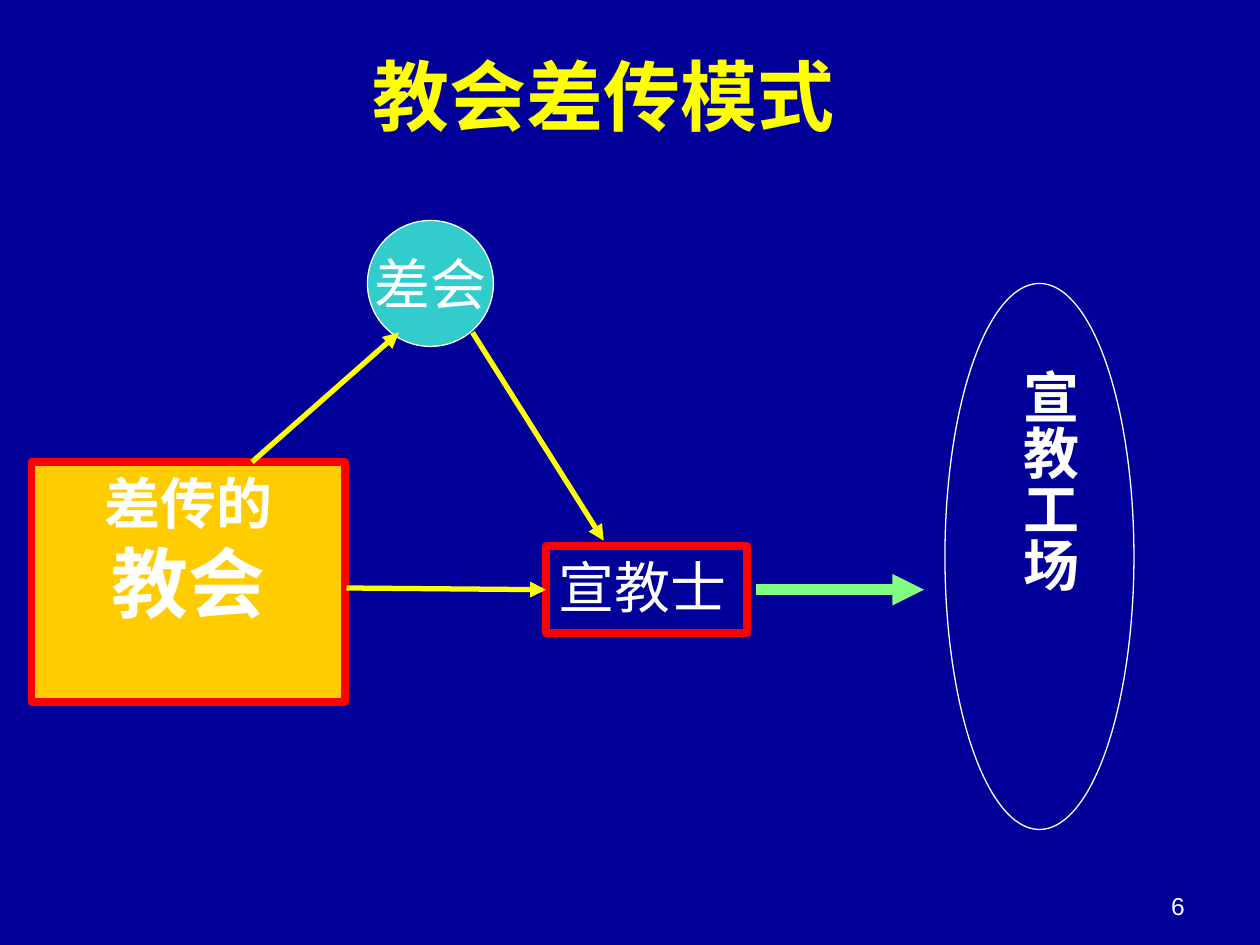
from pptx import Presentation, util as u
from pptx.dml.color import RGBColor
from pptx.enum import shapes, text
from pptx.oxml import ns
from lxml import etree

COLORS = {
    "background": "000099",
    "title": "FFFF00",
    "text": "FFFFFF",
    "church": "FFCC00",
    "border": "FF0000",
    "agency": "33CCCC",
    "sending": "FFFF00",
    "field": "82FF82",
}
FONT = "Arial"


def color(name):
    return RGBColor.from_string(COLORS[name])


def points(*values):
    return [u.Pt(value) for value in values]


def add_text(shape, lines, bold=False, ink="text", align=text.PP_ALIGN.CENTER,
             anchor=text.MSO_ANCHOR.TOP, wrap=True):
    """Write one paragraph for each (wording, size) pair."""
    frame = shape.text_frame
    frame.word_wrap = wrap
    frame.vertical_anchor = anchor
    for index, (wording, size) in enumerate(lines):
        paragraph = frame.add_paragraph() if index else frame.paragraphs[0]
        paragraph.alignment = align
        run = paragraph.add_run()
        run.text = wording
        run.font.name = FONT
        run.font.size = u.Pt(size)
        run.font.bold = bold
        run.font.color.rgb = color(ink)


def add_label(slide, bounds, lines, **style):
    label = slide.shapes.add_textbox(*points(*bounds))
    add_text(label, lines, **style)
    return label


def add_node(slide, kind, bounds, line, width, fill=None):
    node = slide.shapes.add_shape(kind, *points(*bounds))
    node.shadow.inherit = False
    if fill:
        node.fill.solid()
        node.fill.fore_color.rgb = color(fill)
    else:
        node.fill.background()
    node.line.color.rgb = color(line)
    node.line.width = u.Pt(width)
    return node


def add_arrow(slide, start, end, line="sending", width=3):
    arrow = slide.shapes.add_connector(
        shapes.MSO_CONNECTOR.STRAIGHT, *points(*start, *end))
    arrow.line.color.rgb = color(line)
    arrow.line.width = u.Pt(width)
    etree.SubElement(arrow.line._get_or_add_ln(), ns.qn("a:tailEnd"), type="triangle")
    etree.SubElement(arrow._element.spPr, ns.qn("a:effectLst"))
    return arrow


def main():
    presentation = Presentation()
    presentation.slide_width, presentation.slide_height = points(720, 540)
    slide = presentation.slides.add_slide(presentation.slide_layouts[6])
    slide.background.fill.solid()
    slide.background.fill.fore_color.rgb = color("background")
    rectangle, oval = shapes.MSO_SHAPE.RECTANGLE, shapes.MSO_SHAPE.OVAL

    # Sending church and missionary
    church = add_node(slide, rectangle, (18, 264, 179, 137), "border", 4.5, "church")
    add_text(church, [("差传的", 32), ("教会", 44)], bold=True)
    missionary = add_node(slide, rectangle, (312, 312, 115, 50), "border", 4.5)
    add_text(missionary, [("宣教士", 32)], align=text.PP_ALIGN.LEFT)

    # Mission field with vertical label
    add_node(slide, oval, (540, 162, 108, 312), "text", 0.75)
    field = add_label(slide, (570, 204, 52.5, 210), [("宣教工场", 32)], bold=True)
    field.text_frame._txBody.bodyPr.set("vert", "eaVert")
    add_arrow(slide, (432, 337), (528, 337), "field", 6)

    # Mission agency
    agency = add_node(slide, oval, (210, 126, 72, 72), "text", 0.75, "agency")
    add_text(agency, [("差会", 32)], anchor=text.MSO_ANCHOR.MIDDLE, wrap=False)

    # Sending routes, direct and through the agency
    direct = add_arrow(slide, (198, 336), (312, 337))
    direct.end_connect(missionary, 1)
    add_arrow(slide, (270, 190), (345, 309))
    add_arrow(slide, (144, 264), (228, 190))

    # Title and slide number
    add_label(slide, (180, 24, 330, 60.5), [("教会差传模式", 44)], bold=True, ink="title")
    add_label(slide, (516, 492, 168, 37.5), [("6", 14)],
              align=text.PP_ALIGN.RIGHT, anchor=text.MSO_ANCHOR.BOTTOM)

    presentation.save("out.pptx")


if __name__ == "__main__":
    main()
